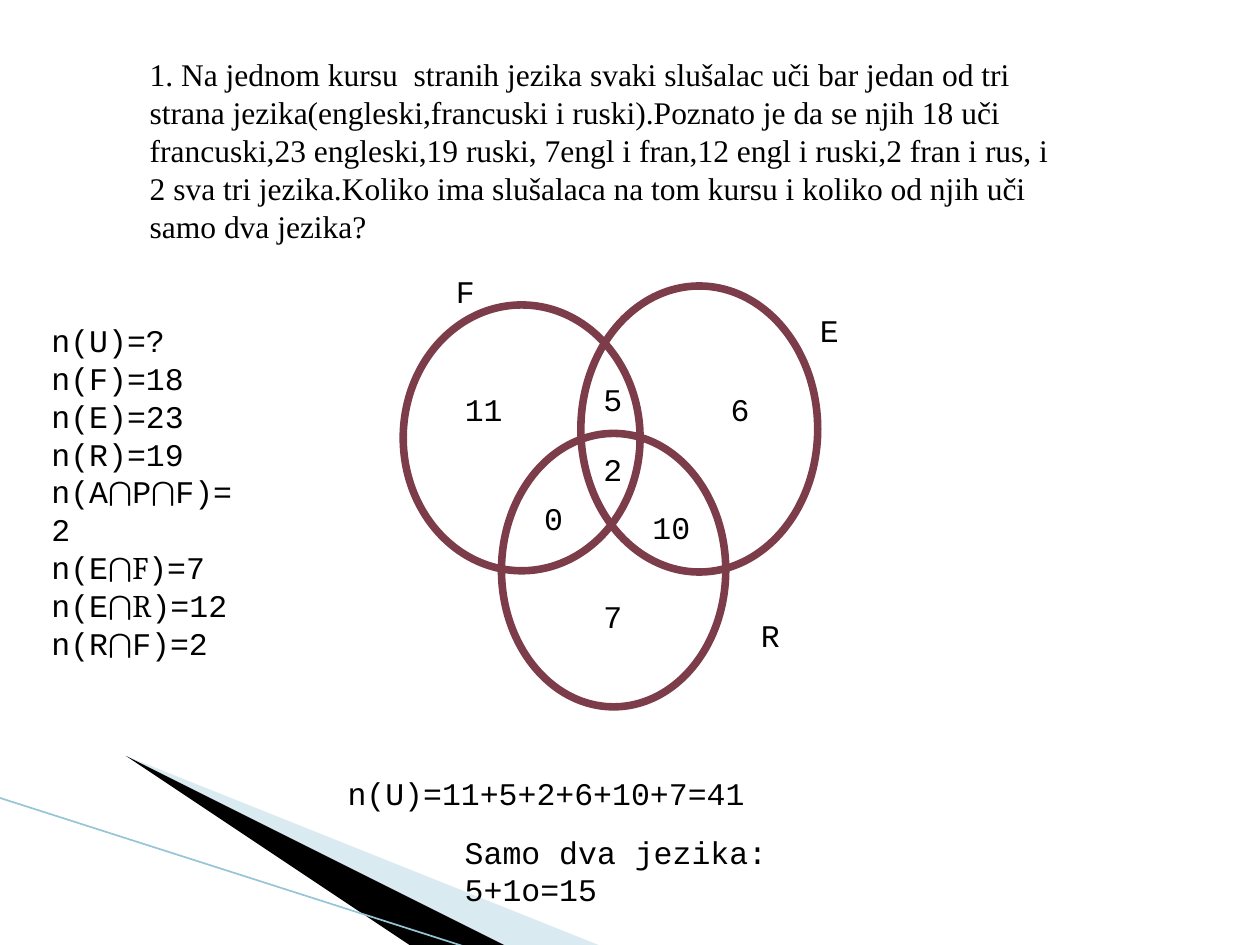
from dataclasses import dataclass

from lxml import etree
from pptx import Presentation
from pptx.dml.color import RGBColor
from pptx.enum.shapes import MSO_CONNECTOR, MSO_SHAPE
from pptx.oxml.ns import qn
from pptx.util import Inches, Pt

OVAL = MSO_SHAPE.OVAL
STRAIGHT = MSO_CONNECTOR.STRAIGHT
BLANK_LAYOUT = 6


@dataclass(frozen=True)
class Theme:
    text: RGBColor = RGBColor(0, 0, 0)
    paper: RGBColor = RGBColor(0xFF, 0xFF, 0xFF)
    ring: RGBColor = RGBColor(0x7D, 0x3C, 0x4A)
    pale_wedge: RGBColor = RGBColor(0xA0, 0xCB, 0xDC)
    dark_wedge: RGBColor = RGBColor(0, 0, 0)
    edge: RGBColor = RGBColor(0x97, 0xC5, 0xD8)
    size: Pt = Pt(18)
    leading: Pt = Pt(21.6)
    ring_width: Pt = Pt(4.33)
    edge_width: Pt = Pt(0.95)
    question_font: str = "Times New Roman"
    work_font: str = "Courier New"
    symbol_font: str = "Cambria"


@dataclass(frozen=True)
class Box:
    left: float
    top: float
    width: float
    height: float

    def emu(self) -> tuple:
        return tuple(Inches(v) for v in (self.left, self.top, self.width, self.height))


@dataclass(frozen=True)
class Label:
    text: str
    left: float
    top: float
    width: float = 0.36


THEME = Theme()
LINE_HEIGHT = 0.4

QUESTION = (
    "1. Na jednom kursu  stranih jezika svaki slušalac uči bar jedan od tri strana "
    "jezika(engleski,francuski i ruski).Poznato je da se njih 18 uči francuski,23 engleski,"
    "19 ruski, 7engl i fran,12 engl i ruski,2 fran i rus, i 2 sva tri jezika.Koliko ima "
    "slušalaca na tom kursu i koliko od njih uči samo dva jezika?"
)

# Each line alternates between the working font and the symbol font
GIVEN = [
    ["n(U)=?"],
    ["n(F)=18"],
    ["n(E)=23"],
    ["n(R)=19"],
    ["n(A", "⋂", "P", "⋂", "F)=2"],
    ["n(E", "⋂F", ")=7"],
    ["n(E", "⋂R", ")=12"],
    ["n(R", "⋂", "F)=2"],
]

FRENCH = Box(3.2, 2.42, 1.88, 2.11)
ENGLISH = Box(4.61, 2.27, 1.88, 2.27)
RUSSIAN = Box(3.98, 3.44, 1.78, 2.17)

LABELS = [
    # Set names
    Label("F", 3.52, 2.11),
    Label("E", 6.41, 2.42),
    Label("R", 5.94, 4.84),
    # Counts in each region
    Label("2", 4.69, 3.52),
    Label("5", 4.69, 2.97),
    Label("10", 5.08, 3.98, 0.52),
    Label("0", 4.22, 3.91),
    Label("11", 3.59, 3.05, 0.52),
    Label("6", 5.7, 3.05),
    Label("7", 4.69, 4.69),
    # Results
    Label("n(U)=11+5+2+6+10+7=41", 2.66, 6.09, 3.69),
    Label("Samo dva jezika: 5+1o=15", 3.59, 6.56, 3.54),
]


def add_wedge(slide, points: list, color: RGBColor, opacity: int = 100) -> None:
    builder = slide.shapes.build_freeform(*points[0], scale=Inches(1))
    builder.add_line_segments(points[1:], close=True)
    wedge = builder.convert_to_shape()
    wedge.shadow.inherit = False
    wedge.fill.solid()
    wedge.fill.fore_color.rgb = color
    wedge.line.fill.background()
    if opacity < 100:
        solid_color = wedge._element.spPr.find(qn("a:solidFill"))[0]
        etree.SubElement(solid_color, qn("a:alpha"), val=str(opacity * 1000))


def add_edge(slide, start: tuple, end: tuple) -> None:
    edge = slide.shapes.add_connector(STRAIGHT, *(Inches(v) for v in start + end))
    edge.line.color.rgb = THEME.edge
    edge.line.width = THEME.edge_width
    etree.SubElement(edge._element.spPr, qn("a:effectLst"))


def add_ring(slide, box: Box, filled: bool = False) -> None:
    ring = slide.shapes.add_shape(OVAL, *box.emu())
    ring.shadow.inherit = False
    if filled:
        ring.fill.solid()
        ring.fill.fore_color.rgb = THEME.paper
    else:
        ring.fill.background()
    ring.line.color.rgb = THEME.ring
    ring.line.width = THEME.ring_width


def add_text(slide, box: Box, lines: list, font: str = THEME.work_font) -> None:
    frame = slide.shapes.add_textbox(*box.emu()).text_frame
    frame.word_wrap = True
    for index, parts in enumerate(lines):
        paragraph = frame.add_paragraph() if index else frame.paragraphs[0]
        paragraph.line_spacing = THEME.leading
        paragraph.font.size = THEME.size
        paragraph.font.color.rgb = THEME.text
        paragraph.font.name = font
        for position, part in enumerate(parts):
            run = paragraph.add_run()
            run.text = part
            if position % 2:
                run.font.name = THEME.symbol_font


def main() -> None:
    deck = Presentation()
    deck.slide_width, deck.slide_height = Inches(10), Inches(7.5)
    slide = deck.slides.add_slide(deck.slide_layouts[BLANK_LAYOUT])

    # Corner decoration
    add_wedge(slide, [(0.55, 6.5), (5.95, 7.51), (4.56, 7.51)], THEME.pale_wedge, 40)
    add_wedge(slide, [(0.53, 6.49), (4.57, 7.51), (3.72, 7.52)], THEME.dark_wedge)
    add_edge(slide, (-0.01, 6.33), (3.71, 7.52))

    # Question and given values
    add_text(slide, Box(1.09, 0.39, 7.34, 1.62), [[QUESTION]], THEME.question_font)
    add_text(slide, Box(0.31, 2.5, 1.72, 4.34), GIVEN)

    # Venn diagram with its labels and the results
    add_ring(slide, FRENCH, filled=True)
    add_ring(slide, ENGLISH)
    add_ring(slide, RUSSIAN)
    for label in LABELS:
        add_text(slide, Box(label.left, label.top, label.width, LINE_HEIGHT), [[label.text]])

    deck.save("out.pptx")


if __name__ == "__main__":
    main()
